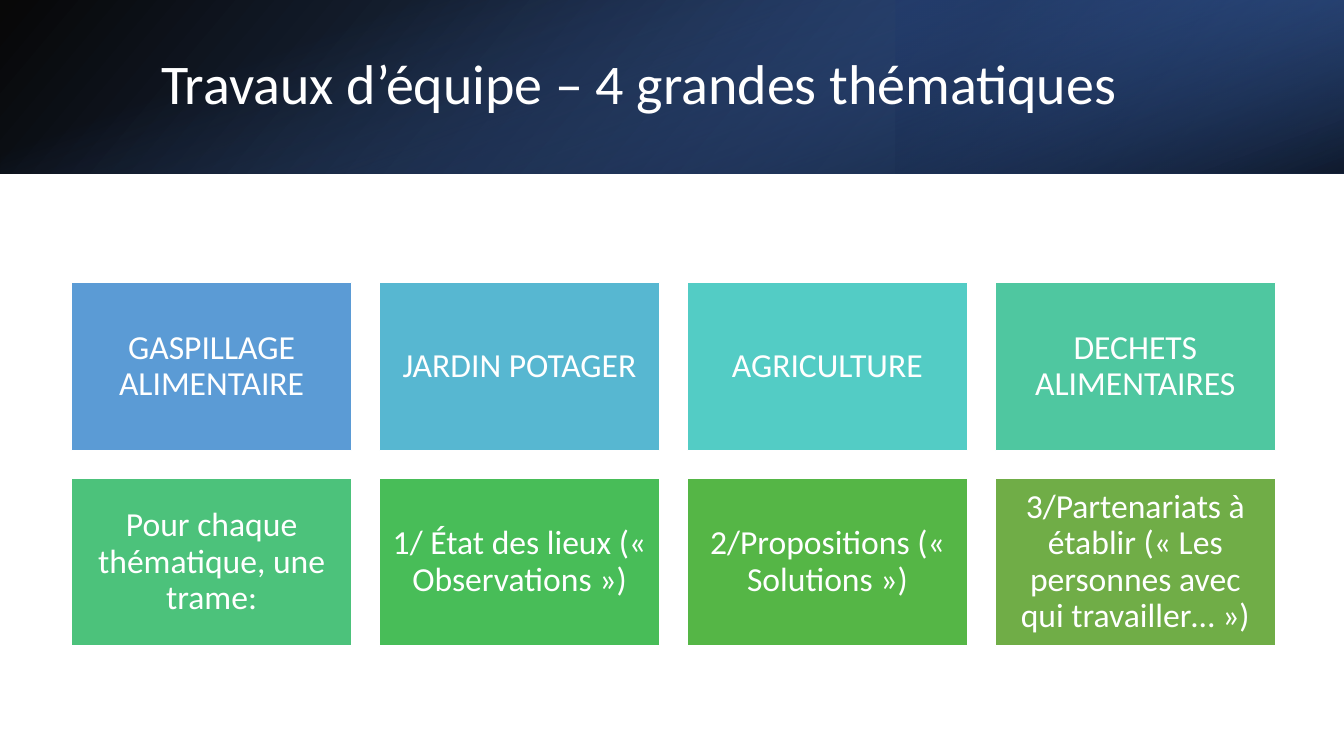
import pptx
import pptx.dml.color
import pptx.enum.shapes
import pptx.enum.text
import pptx.oxml
import pptx.oxml.ns
import pptx.util

Inches = pptx.util.Inches

COLOURS = {
    "white": "FFFFFF", "black": "000000", "blue": "4472C4",
    "dark_blue": "2F5597", "navy": "203864",
}
THEMES = [
    ("GASPILLAGE ALIMENTAIRE", "5B9BD5"),
    ("JARDIN POTAGER", "57B7D1"),
    ("AGRICULTURE", "53CCC5"),
    ("DECHETS ALIMENTAIRES", "4FC7A0"),
    ("Pour chaque thématique, une trame:", "4CC27B"),
    ("1/ État des lieux (« Observations »)", "48BD58"),
    ("2/Propositions (« Solutions »)", "55B646"),
    ("3/Partenariats à établir (« Les personnes avec qui travailler… »)", "70AD47"),
]


def colour(value):
    return pptx.dml.color.RGBColor.from_string(value)


def add_rectangle(page, left, top, width, height):
    shape = page.shapes.add_shape(
        pptx.enum.shapes.MSO_SHAPE.RECTANGLE,
        Inches(left), Inches(top), Inches(width), Inches(height))
    shape.shadow.inherit = False
    return shape


def write_text(shape, text, size, align):
    frame = shape.text_frame
    settings = {"word_wrap": True,
                "vertical_anchor": pptx.enum.text.MSO_ANCHOR.MIDDLE,
                "margin_left": Inches(0.1), "margin_right": Inches(0.1)}
    for name, value in settings.items():
        setattr(frame, name, value)
    para = frame.paragraphs[0]
    para.alignment = align
    para.line_spacing = 0.9
    span = para.add_run()
    span.text = text
    for name, value in {"name": "Calibri", "size": pptx.util.Pt(size)}.items():
        setattr(span.font, name, value)
    span.font.color.rgb = colour(COLOURS["white"])


def fade(shape, stops, angle):
    """Fill with a gradient; each stop is position, colour name and opacity in percent."""
    stop_xml = "".join(
        f'<a:gs pos="{position * 1000}"><a:srgbClr val="{COLOURS[name]}">'
        f'<a:alpha val="{opacity * 1000}"/></a:srgbClr></a:gs>'
        for position, name, opacity in stops)
    gradient = pptx.oxml.parse_xml(
        f'<a:gradFill {pptx.oxml.ns.nsdecls("a")} rotWithShape="1">'
        f'<a:gsLst>{stop_xml}</a:gsLst>'
        f'<a:lin ang="{angle * 60000}" scaled="0"/></a:gradFill>')
    shape.fill.background()
    properties = shape.element.spPr
    properties.replace(properties.find(pptx.oxml.ns.qn("a:noFill")), gradient)
    shape.line.fill.background()


def add_banner(page, left, top, width, height):
    """Three layered gradients with the title on top."""
    third = width / 3
    middle_x, middle_y = left + width / 2, top + height / 2
    layers = [
        ((left, top, width, height), 0, True,
         [(0, "black", 96), (100, "dark_blue", 96)], 140),
        ((left + 2 * third, top, third, height), 180, True,
         [(19, "navy", 68), (100, "blue", 79)], 320),
        ((middle_x - height / 2, middle_y - width / 2, height, width), 90, False,
         [(23, "blue", 0), (99, "black", 74)], 340),
    ]
    for box, rotation, flipped, stops, angle in layers:
        layer = add_rectangle(page, *box)
        layer.rotation = rotation
        if flipped:
            layer.element.spPr.xfrm.set("flipH", "1")
        fade(layer, stops, angle)

    title = page.shapes.add_textbox(
        Inches(left + 1.5), Inches(top + 0.38), Inches(10.98), Inches(0.96))
    write_text(title, "Travaux d’équipe – 4 grandes thématiques", 40,
               pptx.enum.text.PP_ALIGN.LEFT)


def add_theme_grid(page, left, top, width, height, columns=4, rows=2, gap=0.275):
    card_width = (width - (columns - 1) * gap) / columns
    card_height = (height - (rows - 1) * gap) / rows
    for index, (text, fill) in enumerate(THEMES):
        row, column = divmod(index, columns)
        card = add_rectangle(page, left + column * (card_width + gap),
                             top + row * (card_height + gap),
                             card_width, card_height)
        card.fill.solid()
        card.fill.fore_color.rgb = colour(fill)
        card.line.color.rgb = colour(COLOURS["white"])
        card.line.width = pptx.util.Pt(1)
        write_text(card, text, 24, pptx.enum.text.PP_ALIGN.CENTER)


def main():
    deck = pptx.Presentation()
    deck.slide_width, deck.slide_height = Inches(13.33), Inches(7.5)
    page = deck.slides.add_slide(deck.slide_layouts[6])
    add_banner(page, 0, 0, 13.33, 1.72)
    add_theme_grid(page, 0.71, 2.8, 11.94, 3.61)
    deck.save("out.pptx")


if __name__ == "__main__":
    main()
